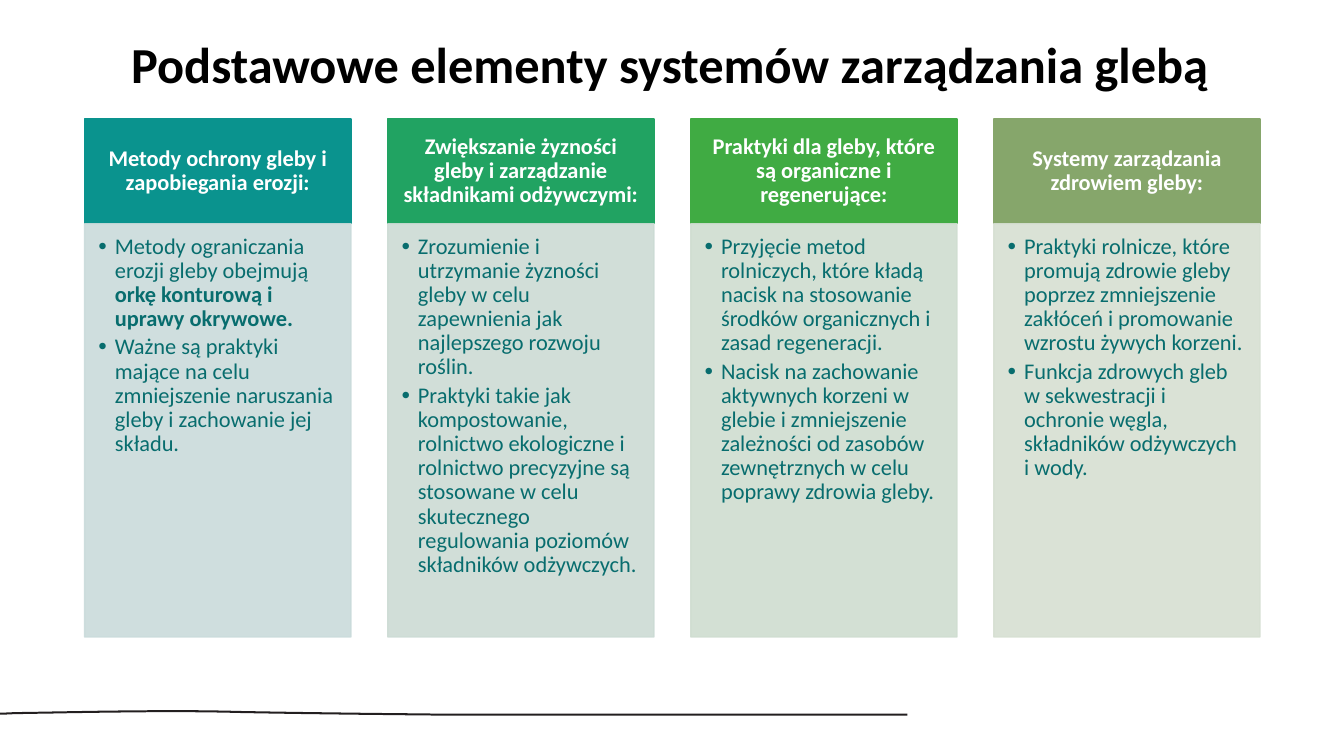
from lxml import etree
from pptx import Presentation
from pptx.dml.color import RGBColor
from pptx.enum.shapes import MSO_SHAPE
from pptx.enum.text import MSO_ANCHOR, MSO_AUTO_SIZE, PP_ALIGN
from pptx.oxml.ns import qn
from pptx.util import Inches, Pt

RECTANGLE = MSO_SHAPE.RECTANGLE
TOP, MIDDLE = MSO_ANCHOR.TOP, MSO_ANCHOR.MIDDLE
LEFT, CENTER = PP_ALIGN.LEFT, PP_ALIGN.CENTER
GROW = MSO_AUTO_SIZE.SHAPE_TO_FIT_TEXT

FONT = "Calibri"
BODY_COLOR = "086D6E"
HEADER_HEIGHT = 1.04
COLUMN_LEFT, COLUMN_TOP, COLUMN_WIDTH, COLUMN_HEIGHT = 0.84, 1.18, 2.64, 5.14
COLUMN_STEP = 3.006

COLUMNS = [
    ("0A938E", "CADBDB", "Metody ochrony gleby i zapobiegania erozji:", [
        ["Metody ograniczania erozji gleby obejmują ",
         "orkę konturową i uprawy okrywowe."],
        ["Ważne są praktyki mające na celu zmniejszenie naruszania gleby "
         "i zachowanie jej składu."],
    ]),
    ("21A362", "CCDBD4",
     "Zwiększanie żyzności gleby i zarządzanie składnikami odżywczymi:", [
         ["Zrozumienie i utrzymanie żyzności gleby w celu zapewnienia jak "
          "najlepszego rozwoju roślin."],
         ["Praktyki takie jak kompostowanie, rolnictwo ekologiczne i rolnictwo "
          "precyzyjne są stosowane w celu skutecznego regulowania poziomów "
          "składników odżywczych."],
     ]),
    ("40AB43", "CFDDD0", "Praktyki dla gleby, które są organiczne i regenerujące:", [
        ["Przyjęcie metod rolniczych, które kładą nacisk na stosowanie środków "
         "organicznych i zasad regeneracji."],
        ["Nacisk na zachowanie aktywnych korzeni w glebie i zmniejszenie "
         "zależności od zasobów zewnętrznych w celu poprawy zdrowia gleby."],
    ]),
    ("86A66B", "D6DFD2", "Systemy zarządzania zdrowiem gleby:", [
        ["Praktyki rolnicze, które promują zdrowie gleby poprzez zmniejszenie "
         "zakłóceń i promowanie wzrostu żywych korzeni."],
        ["Funkcja zdrowych gleb w sekwestracji i ochronie węgla, składników "
         "odżywczych i wody."],
    ]),
]

WAVE_START = (0, 7.08)
WAVE_CURVES = [
    [(0.01, 7.08), (0.06, 7.08), (0.14, 7.075)],
    [(0.52, 7.07), (1.55, 7.045), (2.23, 7.06)],
    [(2.8, 7.075), (4.41, 7.09), (4.43, 7.09)],
]
WAVE_END = (9, 7.09)
WAVE_HALF = 0.01


def color(value):
    return RGBColor.from_string(value)


def style_span(span, size, value, bold):
    span.font.name = FONT
    span.font.size = Pt(size)
    span.font.bold = bold
    span.font.color.rgb = color(value)


def add_panel(page, left, top, width, height, fill, insets, anchor):
    box = page.shapes.add_shape(
        RECTANGLE, Inches(left), Inches(top), Inches(width), Inches(height))
    box.shadow.inherit = False
    box.fill.solid()
    box.fill.fore_color.rgb = color(fill)
    box.line.color.rgb = color(fill)
    box.line.width = Pt(1)
    frame = box.text_frame
    frame.word_wrap = True
    frame.vertical_anchor = anchor
    (frame.margin_left, frame.margin_top,
     frame.margin_right, frame.margin_bottom) = map(Inches, insets)
    return box


def make_translucent(box, percent):
    for solid in box.fill._xPr.iter(qn("a:solidFill")):
        etree.SubElement(solid[0], qn("a:alpha"), val=str(percent * 1000))


def add_bullet(para):
    properties = para._p.get_or_add_pPr()
    properties.set("marL", str(Inches(0.19)))
    properties.set("indent", str(Inches(-0.19)))
    bullet_color = etree.SubElement(properties, qn("a:buClr"))
    etree.SubElement(bullet_color, qn("a:srgbClr"), val=BODY_COLOR)
    etree.SubElement(properties, qn("a:buFont"), typeface=FONT)
    etree.SubElement(properties, qn("a:buChar"), char="∙")


def add_column(page, left, top, width, height, column):
    header_fill, body_fill, heading, points = column
    header = add_panel(page, left, top, width, HEADER_HEIGHT, header_fill,
                       (0.15, 0.08, 0.15, 0.08), MIDDLE)
    para = header.text_frame.paragraphs[0]
    para.text = heading
    para.alignment = CENTER
    para.line_spacing = 0.9
    style_span(para.runs[0], 16, "FFFFFF", True)

    body = add_panel(page, left, top + HEADER_HEIGHT, width, height - HEADER_HEIGHT,
                     body_fill, (0.11, 0.11, 0.15, 0.17), TOP)
    make_translucent(body, 90)
    frame = body.text_frame
    for index, parts in enumerate(points):
        para = frame.add_paragraph() if index else frame.paragraphs[0]
        para.level = 1
        para.alignment = LEFT
        para.line_spacing = 0.9
        if index:
            para.space_before = Pt(2.9)
        add_bullet(para)
        for order, part in enumerate(parts):
            span = para.add_run()
            span.text = part
            style_span(span, 16, BODY_COLOR, order > 0)


def add_title(page, left, top, width, height):
    box = page.shapes.add_textbox(
        Inches(left), Inches(top), Inches(width), Inches(height))
    frame = box.text_frame
    frame.word_wrap = True
    frame.auto_size = GROW
    para = frame.paragraphs[0]
    para.text = "Podstawowe elementy systemów zarządzania glebą"
    para.alignment = CENTER
    style_span(para.runs[0], 36, "000000", True)


def curve_points(start, curve, steps=12):
    controls = [start, *curve]
    for step in range(1, steps + 1):
        t = step / steps
        weights = ((1 - t) ** 3, 3 * t * (1 - t) ** 2, 3 * t * t * (1 - t), t ** 3)
        yield tuple(sum(weight * point[axis] for weight, point in zip(weights, controls))
                    for axis in (0, 1))


def add_wave(page):
    center = [WAVE_START]
    for curve in WAVE_CURVES:
        center.extend(curve_points(center[-1], curve))
    center.append(WAVE_END)
    outline = [(Inches(x), Inches(y - WAVE_HALF)) for x, y in center]
    outline += [(Inches(x), Inches(y + WAVE_HALF)) for x, y in reversed(center)]
    builder = page.shapes.build_freeform(*outline[0])
    builder.add_line_segments(outline[1:], close=True)
    wave = builder.convert_to_shape()
    wave.shadow.inherit = False
    wave.fill.solid()
    wave.fill.fore_color.rgb = color("231F20")
    wave.line.fill.background()


def main():
    deck = Presentation()
    deck.slide_width = Inches(13.33)
    deck.slide_height = Inches(7.5)
    page = deck.slides.add_slide(deck.slide_layouts[6])
    add_wave(page)
    for index, column in enumerate(COLUMNS):
        add_column(page, COLUMN_LEFT + index * COLUMN_STEP, COLUMN_TOP,
                   COLUMN_WIDTH, COLUMN_HEIGHT, column)
    add_title(page, 0.73, 0.28, 11.83, 0.71)
    deck.save("out.pptx")


if __name__ == "__main__":
    main()
